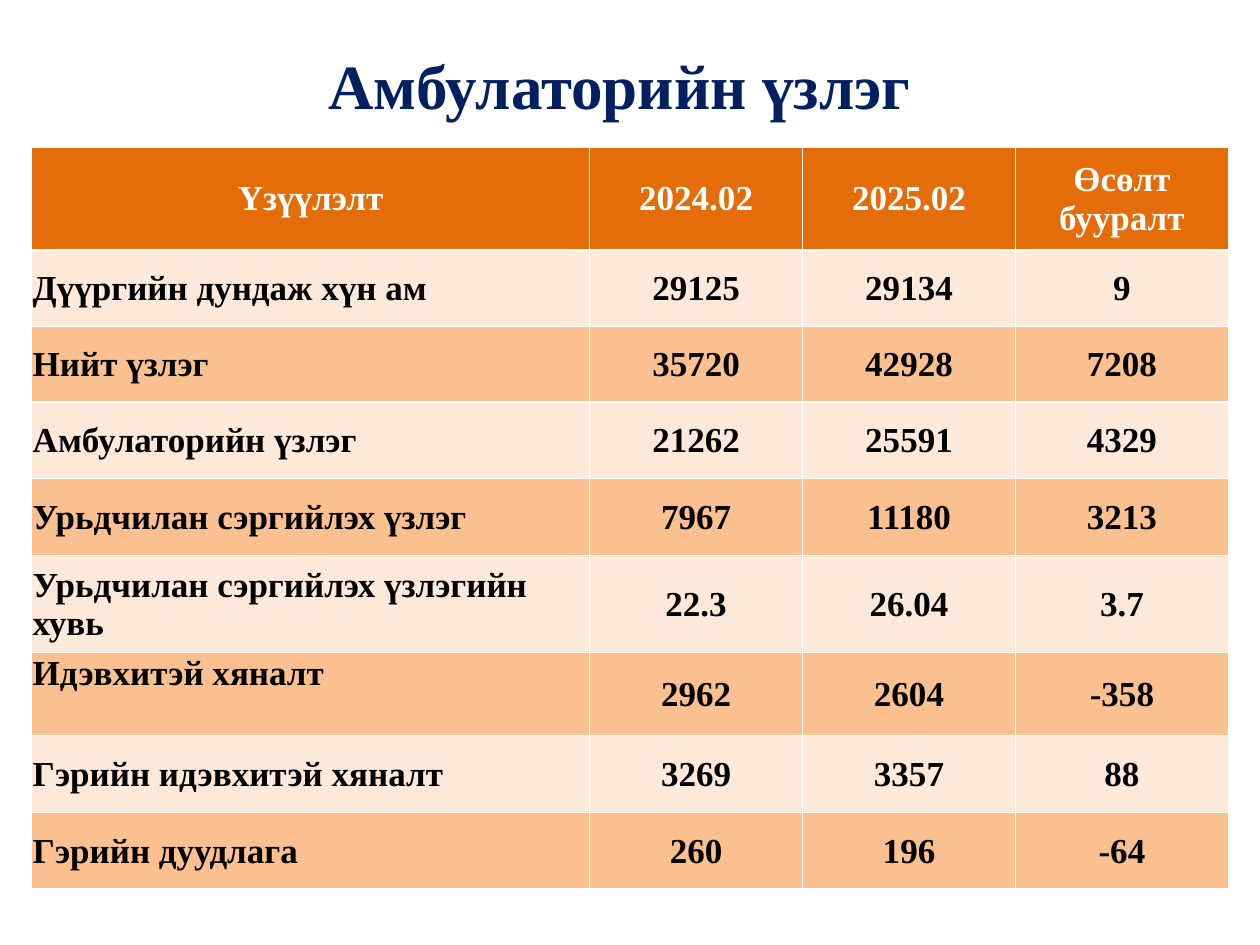
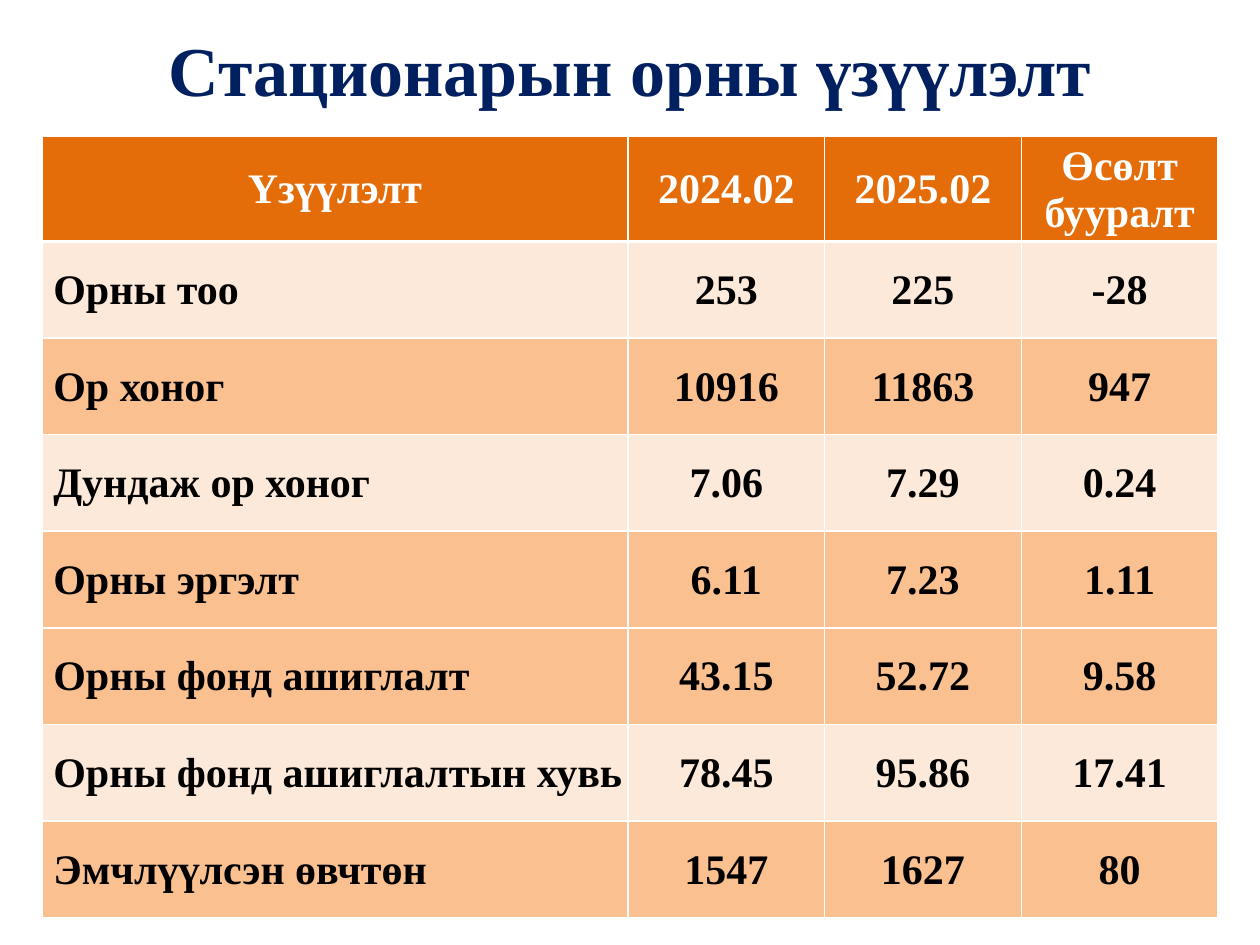
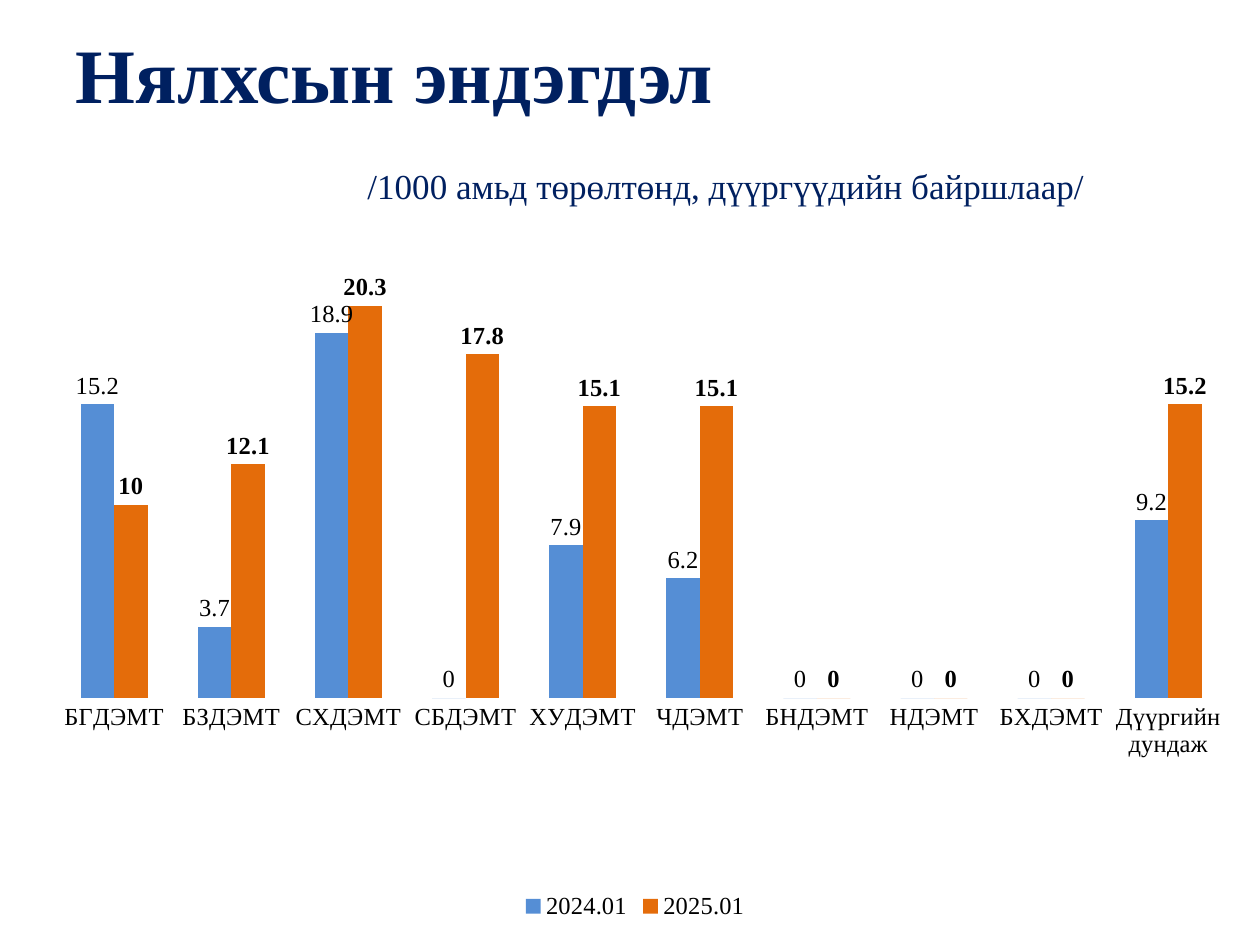
from dataclasses import dataclass
from typing import Any

from lxml.etree import SubElement
from pptx import Presentation
from pptx.chart.chart import Chart
from pptx.chart.data import CategoryChartData
from pptx.dml.color import RGBColor
from pptx.enum.chart import XL_CHART_TYPE, XL_LABEL_POSITION, XL_LEGEND_POSITION, XL_TICK_MARK
from pptx.enum.text import MSO_ANCHOR, MSO_AUTO_SIZE, PP_ALIGN
from pptx.oxml import parse_xml
from pptx.oxml.ns import nsdecls, qn
from pptx.slide import Slide
from pptx.table import _Cell
from pptx.util import Inches, Pt

NAVY = RGBColor(0x00, 0x20, 0x60)
WHITE = RGBColor(0xFF, 0xFF, 0xFF)
BLACK = RGBColor(0x00, 0x00, 0x00)
ORANGE = RGBColor(0xE4, 0x6D, 0x0A)
PEACH = RGBColor(0xFA, 0xC0, 0x90)
CREAM = RGBColor(0xFD, 0xE9, 0xD9)
BLUE = RGBColor(0x55, 0x8E, 0xD5)
BAR_ORANGE = RGBColor(0xE4, 0x6C, 0x0A)

FONT = "Times New Roman"
TITLE_ONLY = 5
SLIDE_WIDTH = Inches(10)
SLIDE_HEIGHT = Inches(7.5)
GRID_COLUMNS = 120
INSET = Inches(0.01)


def grid(count: float) -> int:
    return round(SLIDE_WIDTH / GRID_COLUMNS * count)


@dataclass(frozen=True)
class Area:
    left: float
    top: float
    width: float
    height: float

    def lengths(self) -> tuple[int, ...]:
        return tuple(grid(n) for n in (self.left, self.top, self.width, self.height))


@dataclass(frozen=True)
class Line:
    text: str
    size: int
    bold: bool = True
    align: PP_ALIGN = PP_ALIGN.CENTER
    indent: float = 0
    space_before: int = 0


@dataclass(frozen=True)
class Row:
    label: str
    before: str
    after: str
    change: str
    fill: RGBColor
    height: float
    anchor: MSO_ANCHOR = MSO_ANCHOR.MIDDLE


@dataclass(frozen=True)
class TablePage:
    title: Line
    title_area: Area
    table_area: Area
    label_width: float
    label_inset: float
    size: int
    rows: tuple[Row, ...]


@dataclass(frozen=True)
class Series:
    name: str
    values: tuple[float, ...]
    color: RGBColor
    bold: bool


def header(height: float) -> Row:
    return Row("Үзүүлэлт", "2024.02", "2025.02", "Өсөлт бууралт", ORANGE, height)


OUTPATIENT = TablePage(
    Line("Амбулаторийн үзлэг", 36), Area(5, 3, 108, 10), Area(3, 14, 114, 70.8),
    53.16, 0.01, 20,
    (
        header(9.8),
        Row("Дүүргийн дундаж хүн ам", "29125", "29134", "9", CREAM, 7.32),
        Row("Нийт үзлэг", "35720", "42928", "7208", PEACH, 7.15),
        Row("Амбулаторийн үзлэг", "21262", "25591", "4329", CREAM, 7.32),
        Row("Урьдчилан сэргийлэх үзлэг", "7967", "11180", "3213", PEACH, 7.32),
        Row("Урьдчилан сэргийлэх үзлэгийн хувь", "22.3", "26.04", "3.7", CREAM, 9.25),
        Row("Идэвхитэй хяналт", "2962", "2604", "-358", PEACH, 7.9, MSO_ANCHOR.TOP),
        Row("Гэрийн идэвхитэй хяналт", "3269", "3357", "88", CREAM, 7.32),
        Row("Гэрийн дуудлага", "260", "196", "-64", PEACH, 7.32),
    ),
)

BEDS = TablePage(
    Line("Стационарын орны үзүүлэлт", 40), Area(6, 0, 108, 13), Area(4, 13, 112, 74.4),
    55.8, 0.09, 24,
    (
        header(10),
        Row("Орны тоо", "253", "225", "-28", CREAM, 9.2),
        Row("Ор хоног", "10916", "11863", "947", PEACH, 9.2),
        Row("Дундаж ор хоног", "7.06", "7.29", "0.24", CREAM, 9.2),
        Row("Орны эргэлт", "6.11", "7.23", "1.11", PEACH, 9.2),
        Row("Орны фонд ашиглалт", "43.15", "52.72", "9.58", PEACH, 9.2),
        Row("Орны фонд ашиглалтын хувь", "78.45", "95.86", "17.41", CREAM, 9.2),
        Row("Эмчлүүлсэн өвчтөн", "1547", "1627", "80", PEACH, 9.2),
    ),
)

MORTALITY_TITLE = (
    Line("Нялхсын эндэгдэл", 44, align=PP_ALIGN.LEFT),
    Line("/1000 амьд төрөлтөнд, дүүргүүдийн байршлаар/", 20, False, PP_ALIGN.LEFT, 27.8, 26),
)
MORTALITY_TITLE_AREA = Area(6, 3.6, 108, 15)
CHART_AREA = Area(3, 18.4, 115, 69.7)
PLOT_SHARES = {"x": 0.02, "y": 0.03, "w": 0.97, "h": 0.66}
DISTRICTS = ("БГДЭМТ", "БЗДЭМТ", "СХДЭМТ", "СБДЭМТ", "ХУДЭМТ", "ЧДЭМТ",
             "БНДЭМТ", "НДЭМТ", "БХДЭМТ", "Дүүргийн дундаж")
MORTALITY = (
    Series("2024.01", (15.2, 3.7, 18.9, 0, 7.9, 6.2, 0, 0, 0, 9.2), BLUE, False),
    Series("2025.01", (10, 12.1, 20.3, 17.8, 15.1, 15.1, 0, 0, 0, 15.2), BAR_ORANGE, True),
)


def assign(target: Any, values: dict[str, Any]) -> None:
    for name, value in values.items():
        setattr(target, name, value)


def set_font(font: Any, size: int, color: RGBColor, bold: bool) -> None:
    assign(font, {"name": FONT, "size": Pt(size), "bold": bold})
    font.color.rgb = color


def add_title(page: Slide, area: Area, *lines: Line) -> None:
    box = page.shapes.title
    assign(box, dict(zip(("left", "top", "width", "height"), area.lengths())))
    frame = box.text_frame
    assign(frame, {"word_wrap": True, "auto_size": MSO_AUTO_SIZE.NONE,
                   "vertical_anchor": MSO_ANCHOR.MIDDLE})
    for index, line in enumerate(lines):
        para = frame.add_paragraph() if index else frame.paragraphs[0]
        assign(para, {"alignment": line.align, "space_before": Pt(line.space_before)})
        if line.indent:
            para._p.get_or_add_pPr().set("marL", str(grid(line.indent)))
        span = para.add_run()
        span.text = line.text
        set_font(span.font, line.size, NAVY, line.bold)


def add_borders(cell: _Cell, top: float, bottom: float) -> None:
    properties = cell._tc.get_or_add_tcPr()
    widths = {"lnL": 1, "lnR": 1, "lnT": top, "lnB": bottom}
    for index, (side, width) in enumerate(widths.items()):
        border = parse_xml(
            f'<a:{side} {nsdecls("a")} w="{Pt(width)}"><a:solidFill>'
            f'<a:srgbClr val="{WHITE}"/></a:solidFill></a:{side}>'
        )
        properties.insert(index, border)


def add_table_page(page: Slide, content: TablePage) -> None:
    add_title(page, content.title_area, content.title)
    table = page.shapes.add_table(len(content.rows), 4, *content.table_area.lengths()).table
    value_width = (content.table_area.width - content.label_width) / 3
    for column, width in zip(table.columns, (content.label_width, *[value_width] * 3)):
        column.width = grid(width)
    for row_index, row in enumerate(content.rows):
        table.rows[row_index].height = grid(row.height)
        is_header = row_index == 0
        for column_index, text in enumerate((row.label, row.before, row.after, row.change)):
            cell = table.cell(row_index, column_index)
            is_label = column_index == 0 and not is_header
            assign(cell, {
                "text": text,
                "vertical_anchor": row.anchor if is_label else MSO_ANCHOR.MIDDLE,
                "margin_left": Inches(content.label_inset) if is_label else INSET,
                "margin_right": INSET, "margin_top": INSET, "margin_bottom": 0,
            })
            cell.fill.solid()
            cell.fill.fore_color.rgb = row.fill
            para = cell.text_frame.paragraphs[0]
            para.alignment = PP_ALIGN.LEFT if is_label else PP_ALIGN.CENTER
            set_font(para.runs[0].font, content.size, WHITE if is_header else BLACK, True)
            add_borders(cell, 1.5 if row_index == 1 else 1, 1.5 if is_header else 1)


def place_plot(chart: Chart) -> None:
    plot_area = chart._chartSpace.chart.plotArea
    for old_layout in plot_area.findall(qn("c:layout")):
        plot_area.remove(old_layout)
    layout = parse_xml(f'<c:layout {nsdecls("c")}><c:manualLayout/></c:layout>')
    settings = {"layoutTarget": "inner", "xMode": "edge", "yMode": "edge", **PLOT_SHARES}
    for name, value in settings.items():
        SubElement(layout[0], qn(f"c:{name}")).set("val", str(value))
    plot_area.insert(0, layout)


def add_mortality_chart(page: Slide) -> None:
    data = CategoryChartData()
    data.categories = DISTRICTS
    for series in MORTALITY:
        data.add_series(series.name, series.values)
    chart = page.shapes.add_chart(
        XL_CHART_TYPE.COLUMN_CLUSTERED, *CHART_AREA.lengths(), data).chart
    assign(chart, {"has_title": False, "has_legend": True})
    set_font(chart.font, 14, BLACK, False)
    assign(chart.legend, {"position": XL_LEGEND_POSITION.BOTTOM, "include_in_layout": False})
    set_font(chart.legend.font, 14, BLACK, False)
    assign(chart.value_axis, {"visible": False, "has_major_gridlines": False,
                              "minimum_scale": 0, "maximum_scale": 25})
    axis = chart.category_axis
    assign(axis, {"major_tick_mark": XL_TICK_MARK.NONE, "minor_tick_mark": XL_TICK_MARK.NONE})
    axis.format.line.fill.background()
    set_font(axis.tick_labels.font, 14, BLACK, False)
    plot = chart.plots[0]
    assign(plot, {"gap_width": 150, "overlap": 0, "vary_by_categories": False})
    for bars, series in zip(plot.series, MORTALITY):
        bars.format.fill.solid()
        bars.format.fill.fore_color.rgb = series.color
        labels = bars.data_labels
        assign(labels, {"show_value": True, "position": XL_LABEL_POSITION.OUTSIDE_END})
        set_font(labels.font, 14, BLACK, series.bold)
    place_plot(chart)


def main() -> None:
    deck = Presentation()
    assign(deck, {"slide_width": SLIDE_WIDTH, "slide_height": SLIDE_HEIGHT})
    layout = deck.slide_layouts[TITLE_ONLY]
    for content in (OUTPATIENT, BEDS):
        add_table_page(deck.slides.add_slide(layout), content)
    page = deck.slides.add_slide(layout)
    add_title(page, MORTALITY_TITLE_AREA, *MORTALITY_TITLE)
    add_mortality_chart(page)
    deck.save("out.pptx")


if __name__ == "__main__":
    main()
